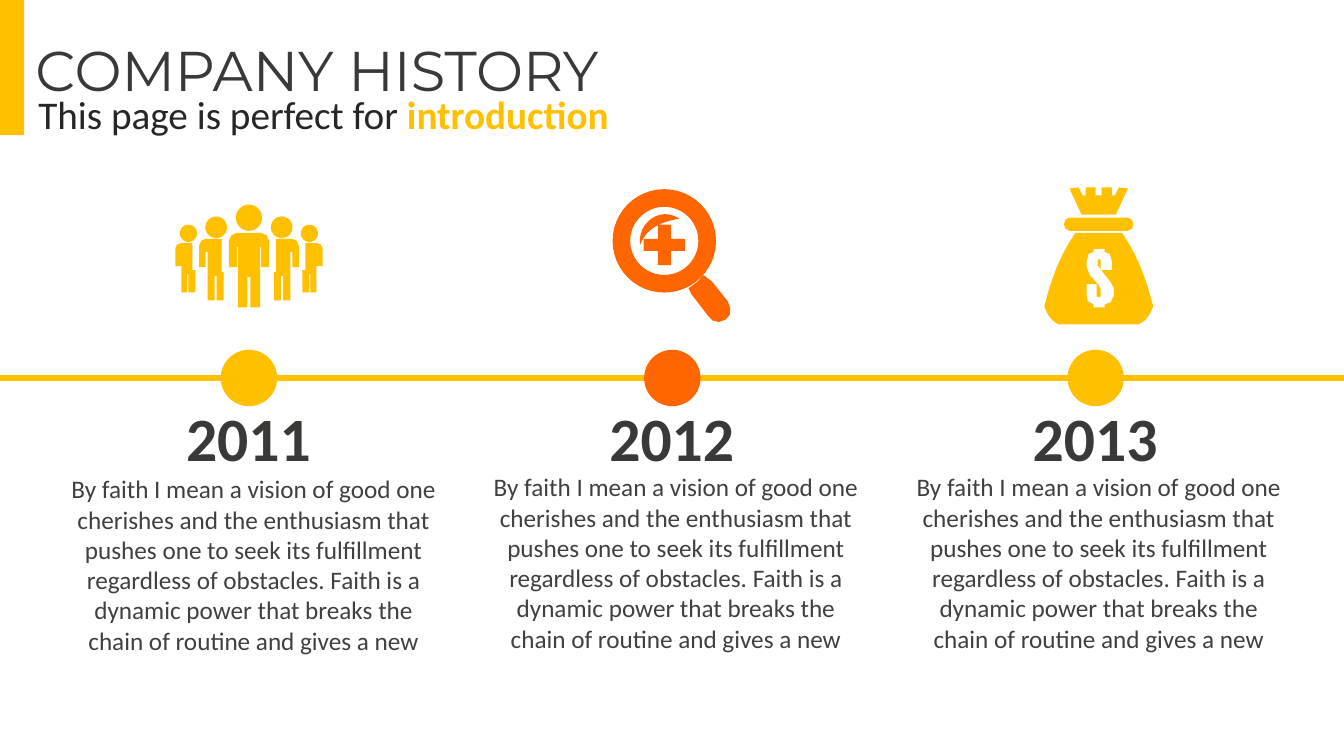
from dataclasses import dataclass
from math import cos, pi, sin

from lxml.etree import SubElement
from pptx import Presentation
from pptx.dml.color import RGBColor
from pptx.enum.shapes import MSO_CONNECTOR as Connector, MSO_SHAPE as Preset
from pptx.enum.text import MSO_ANCHOR as Anchor, MSO_AUTO_SIZE as AutoSize, PP_ALIGN as Align
from pptx.oxml.ns import qn
from pptx.util import Inches, Pt

AMBER = RGBColor(0xFF, 0xC0, 0x00)
ORANGE = RGBColor(0xFF, 0x66, 0x00)
CHARCOAL = RGBColor(0x3B, 0x38, 0x38)
BLACK = RGBColor(0x26, 0x26, 0x26)
GRAY = RGBColor(0x40, 0x40, 0x40)

COLUMNS, ROWS = 133.33, 75
AXIS_ROW, DOT_SIZE = 37.5, 5.6
FIRST_CENTER, CENTER_STEP = 24.7, 42
STORY = ("By faith I mean a vision of good one cherishes and the enthusiasm that pushes one "
         "to seek its fulfillment regardless of obstacles. Faith is a dynamic power that "
         "breaks the chain of routine and gives a new")

HEADING = dict(name="Montserrat", size=Pt(40), bold=False)
INTRO = dict(name="Calibri", size=Pt(28), bold=False)
INTRO_STRONG = INTRO | dict(bold=True)
YEAR = dict(name="Calibri", size=Pt(44), bold=True)
BODY = dict(name="Calibri", size=Pt(18), bold=False)

Point = tuple[float, float]
Contour = list[Point]


@dataclass
class Run:
    text: str
    font: dict
    color: RGBColor


@dataclass
class Milestone:
    year: str
    color: RGBColor
    icon_center: float
    icon: list[Contour]
    story_left: float
    story_top: float
    story_width: float


def cells(count: float) -> int:
    return Inches(count / 10)


def box(left: float, top: float, width: float, height: float) -> list[int]:
    return [cells(length) for length in (left, top, width, height)]


def mirrored(half: Contour) -> Contour:
    return half + [(-x, y) for x, y in reversed(half)]


def flipped(contour: Contour) -> Contour:
    return [(-x, y) for x, y in contour]


def circle(x: float, y: float, radius: float, steps: int = 48) -> Contour:
    angles = [2 * pi * step / steps for step in range(steps)]
    return [(x + radius * cos(angle), y + radius * sin(angle)) for angle in angles]


def curve(start: Point, first: Point, second: Point, end: Point, steps: int = 12) -> Contour:
    shares = [step / steps for step in range(steps + 1)]
    return [tuple((1 - t) ** 3 * a + 3 * (1 - t) ** 2 * t * b + 3 * (1 - t) * t ** 2 * c + t ** 3 * d
                  for a, b, c, d in zip(start, first, second, end)) for t in shares]


def team_icon() -> list[Contour]:
    leader = mirrored([(0.15, 27.5), (0.15, 30.5), (1.1, 30.5), (1.1, 24.5), (1.2, 24.5),
                       (1.2, 26.5), (2, 26.5), (2, 23.9), (1.75, 23.35), (1.2, 23.1)])
    wing = [
        circle(-3.25, 22.55, 1.07),
        [(-2.5, 27), (-2.5, 29.8), (-3.2, 29.8), (-3.2, 27.4), (-3.4, 27.4), (-3.4, 29.8),
         (-4.1, 29.8), (-4.1, 25), (-4.3, 25), (-4.3, 26.5), (-4.95, 26.5), (-4.95, 24.4),
         (-4.75, 23.9), (-4.3, 23.7), (-2.7, 23.7), (-2.7, 27)],
        circle(-6, 23.15, 0.85),
        [(-5.3, 26.8), (-5.3, 29), (-6, 29), (-6, 27.2), (-6.1, 27.2), (-6.1, 29),
         (-6.7, 29), (-6.7, 26.4), (-7.3, 26.4), (-7.3, 24.6), (-7.1, 24.25),
         (-6.7, 24.1), (-5.6, 24.1), (-5.6, 26.8)],
    ]
    return [circle(0, 21.6, 1.3), leader, *wing, *map(flipped, wing)]


def magnifier_icon() -> list[Contour]:
    handle = [(3.9, 27.3), (4.7, 27.9), (6.3, 29.9), (6.55, 30.6), (6.5, 31.2), (6.1, 31.7),
              (5.4, 31.95), (4.8, 31.8), (4.4, 31.4), (2.7, 29.2), (2.4, 28.6), (3.3, 27.95)]
    plus = mirrored([(0.65, 22.3), (0.65, 23.7), (2.05, 23.7), (2.05, 24.9),
                     (0.65, 24.9), (0.65, 26.3)])
    glint = (curve((-2.4, 24.3), (-1.8, 22.7), (-0.4, 22), (1.5, 21.7))
             + curve((1.5, 21.7), (-0.4, 20.4), (-2.7, 22.1), (-2.4, 24.3)))
    return [circle(0, 23.9, 5.13), circle(0, 23.9, 3.38), handle, plus, glint]


def money_bag_icon() -> list[Contour]:
    crown = mirrored([(0.3, 19.4), (0.3, 18.6), (1.3, 18.6), (1.3, 19.4), (1.6, 19.4),
                      (2, 18.6), (2.9, 18.7), (1.7, 21.3)])
    tie = mirrored([(2.9, 21.6), (3.3, 21.8), (3.45, 22.25), (3.3, 22.7), (2.9, 22.9)])
    sack = mirrored(curve((2.3, 23.1), (3.9, 25.4), (4.7, 27.7), (5.4, 30.4))
                    + curve((5.4, 30.4), (5.1, 31.2), (4.7, 31.9), (3.9, 32.2)))
    dollar = [(-0.5, 24.7), (0.6, 24.7), (0.6, 25), (1.1, 25.2), (1.3, 25.9), (1.3, 26.8),
              (0.2, 26.8), (0.2, 25.8), (0, 25.7), (-0.1, 25.9), (-0.1, 26.3), (0.4, 27),
              (1.2, 28), (1.5, 28.6), (1.5, 29.3), (1.2, 30), (0.6, 30.2), (0.6, 30.5),
              (-0.5, 30.5), (-0.5, 30.2), (-1.1, 29.9), (-1.2, 29.3), (-1.2, 28.2),
              (-0.2, 28.2), (-0.2, 29.4), (0, 29.5), (0.2, 29.4), (0.2, 28.7), (0, 28.3),
              (-0.9, 27.3), (-1.2, 26.5), (-1.2, 25.9), (-1, 25.2), (-0.5, 25)]
    return [crown, tie, sack, dollar]


def paint(shape, color: RGBColor) -> None:
    shape.shadow.inherit = False
    shape.fill.solid()
    shape.fill.fore_color.rgb = color
    shape.line.fill.background()


def add_solid(slide, preset: Preset, place: list[int], color: RGBColor) -> None:
    paint(slide.shapes.add_shape(preset, *place), color)


def add_icon(slide, contours: list[Contour], center: float, color: RGBColor) -> None:
    placed = [[(cells(center + x), cells(y)) for x, y in contour] for contour in contours]
    builder = slide.shapes.build_freeform(*placed[0][0])
    for index, (start, *others) in enumerate(placed):
        if index:
            builder.move_to(*start)
        builder.add_line_segments(others, close=True)
    paint(builder.convert_to_shape(), color)


def add_axis(slide) -> None:
    axis = slide.shapes.add_connector(Connector.STRAIGHT, 0, cells(AXIS_ROW),
                                      cells(COLUMNS), cells(AXIS_ROW))
    axis.line.color.rgb = AMBER
    axis.line.width = Pt(4.5)
    SubElement(axis._element.spPr, qn("a:effectLst"))


def write(shape, place: list[int], runs: list[Run], alignment: Align, wrap: bool = True) -> None:
    shape.left, shape.top, shape.width, shape.height = place
    frame = shape.text_frame
    frame_format = dict(word_wrap=wrap, auto_size=AutoSize.NONE, vertical_anchor=Anchor.TOP)
    for name, value in frame_format.items():
        setattr(frame, name, value)
    paragraph = frame.paragraphs[0]
    paragraph_format = dict(alignment=alignment, space_before=Pt(0), line_spacing=1.0)
    for name, value in paragraph_format.items():
        setattr(paragraph, name, value)
    for piece in runs:
        run = paragraph.add_run()
        run.text = piece.text
        for name, value in piece.font.items():
            setattr(run.font, name, value)
        run.font.color.rgb = piece.color


def add_text(slide, place: list[int], run: Run, wrap: bool = True) -> None:
    write(slide.shapes.add_textbox(*place), place, [run], Align.CENTER, wrap)


def add_milestone(slide, milestone: Milestone, center: float) -> None:
    half = DOT_SIZE / 2
    add_solid(slide, Preset.OVAL, box(center - half, AXIS_ROW - half, DOT_SIZE, DOT_SIZE),
              milestone.color)
    add_text(slide, box(center - 7.3, 39.2, 14.5, 8.4),
             Run(milestone.year, YEAR, CHARCOAL), wrap=False)
    add_text(slide, box(milestone.story_left, milestone.story_top, milestone.story_width, 19.2),
             Run(STORY, BODY, GRAY))
    add_icon(slide, milestone.icon, milestone.icon_center, milestone.color)


def main() -> None:
    presentation = Presentation()
    presentation.slide_width, presentation.slide_height = cells(COLUMNS), cells(ROWS)
    slide = presentation.slides.add_slide(presentation.slide_layouts[2])
    title, intro = slide.placeholders

    add_solid(slide, Preset.RECTANGLE, box(0, 0, 2.4, 13.4), AMBER)
    write(title, box(2.5, 3, 63.2, 7.7), [Run("COMPANY HISTORY", HEADING, CHARCOAL)], Align.LEFT)
    write(intro, box(2.8, 8.5, 60.2, 5.7),
          [Run("This page is perfect for ", INTRO, BLACK),
           Run("introduction", INTRO_STRONG, AMBER)], Align.LEFT)
    add_axis(slide)

    milestones = [
        Milestone("2011", AMBER, 24.7, team_icon(), 5.7, 46.5, 38.9),
        Milestone("2012", ORANGE, 65.9, magnifier_icon(), 47.8, 46.3, 38.5),
        Milestone("2013", AMBER, 109, money_bag_icon(), 89.8, 46.3, 38.4),
    ]
    for index, milestone in enumerate(milestones):
        add_milestone(slide, milestone, FIRST_CENTER + index * CENTER_STEP)
    presentation.save("out.pptx")


if __name__ == "__main__":
    main()
